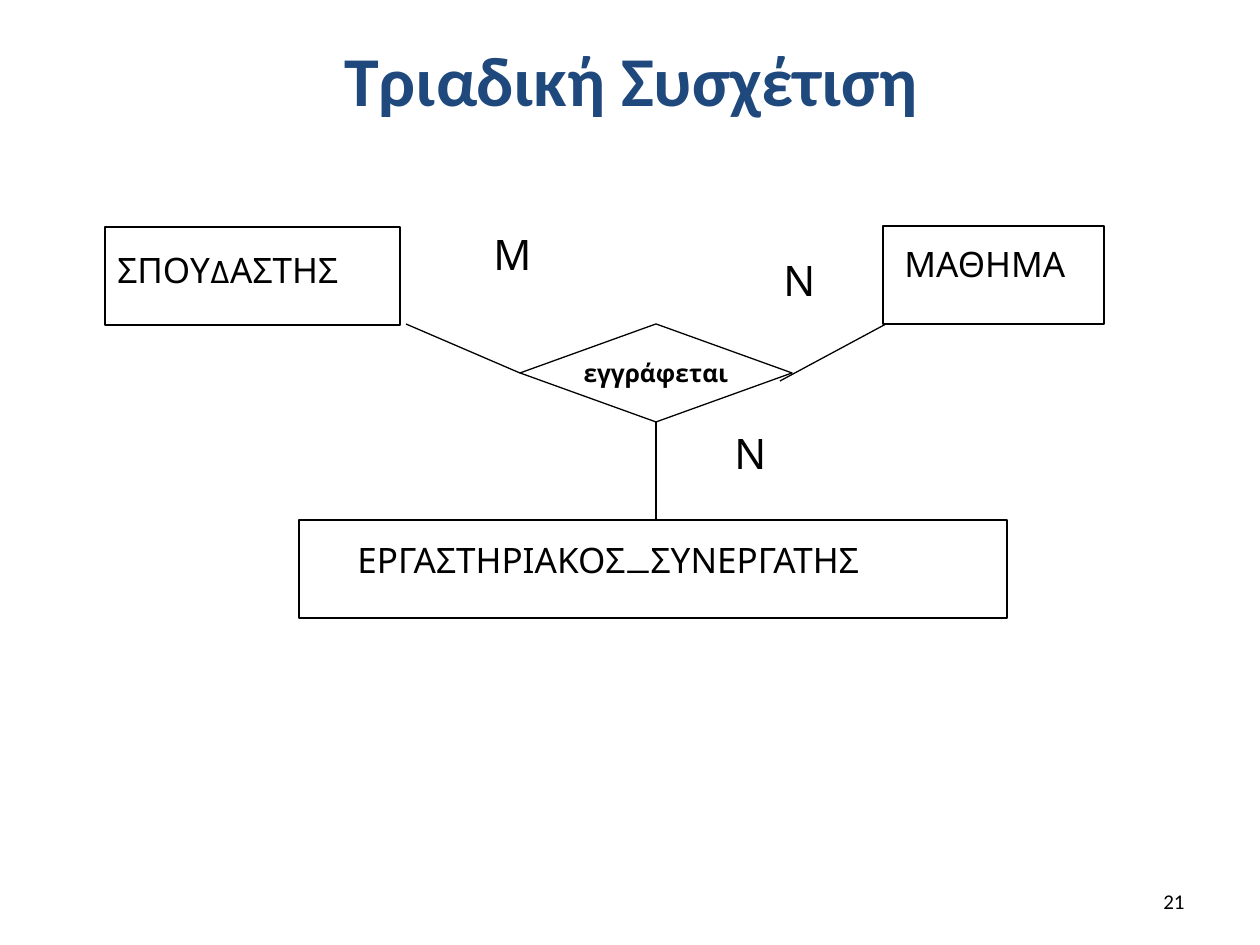
from lxml.etree import SubElement
from pptx import Presentation
from pptx.dml.color import RGBColor
from pptx.enum.shapes import MSO_CONNECTOR as CONN, MSO_SHAPE as SHAPE
from pptx.enum.text import MSO_ANCHOR as ANCHOR, MSO_AUTO_SIZE as AUTO, PP_ALIGN as ALIGN
from pptx.oxml.ns import qn
from pptx.util import Inches, Pt

COLORS = {"ink": "000000", "title": "1F497D"}
SCALE = Inches(1) / 126


def px(n):
    return round(n * SCALE)


def color(name):
    return RGBColor.from_string(COLORS[name])


def write(sp, text, size, font="Karla", ink="ink", bold=False,
          align=ALIGN.LEFT, anchor=ANCHOR.TOP, wrap=False):
    tf = sp.text_frame
    tf.word_wrap = wrap
    tf.vertical_anchor = anchor
    p = tf.paragraphs[0]
    p.alignment = align
    r = p.add_run()
    r.text = text
    r.font.name, r.font.size, r.font.bold = font, Pt(size), bold
    r.font.color.rgb = color(ink)
    return tf


def add_text(s, box, text, size, grow=False, **style):
    sp = s.shapes.add_textbox(*map(px, box))
    tf = write(sp, text, size, **style)
    tf.auto_size = AUTO.SHAPE_TO_FIT_TEXT if grow else AUTO.NONE
    return tf


def add_outline(s, kind, box):
    sp = s.shapes.add_shape(kind, *map(px, box))
    sp.shadow.inherit = False
    sp.fill.background()
    sp.line.color.rgb = color("ink")
    sp.line.width = Pt(0.75)
    return sp


def add_line(s, x1, y1, x2, y2):
    line = s.shapes.add_connector(CONN.STRAIGHT, *map(px, (x1, y1, x2, y2)))
    line.line.color.rgb = color("ink")
    line.line.width = Pt(0.75)
    SubElement(line._element.spPr, qn("a:effectLst"))
    return line


def add_entity(s, box, label_dx, label_dy, label_width, name):
    left, top = box[:2]
    add_outline(s, SHAPE.RECTANGLE, box)
    add_text(s, (left + label_dx, top + label_dy, label_width, 73), name, 20, grow=True)


def add_cardinality(s, left, top, width, letter):
    tf = add_text(s, (left, top, width, 84), letter, 24, grow=True)
    pPr = tf.paragraphs[0]._p.get_or_add_pPr()
    pPr.set("marL", str(px(48)))
    pPr.set("indent", str(-px(48)))


def add_diagram(s, left, top):
    height = 98

    # Entities
    add_entity(s, (left, top + 5, 295, height), 0, 15, 295, "ΣΠΟΥΔΑΣΤΗΣ")
    add_entity(s, (left + 778, top + 4, 221, height), 9, 10, 209, "ΜΑΘΗΜΑ")
    add_entity(s, (left + 194, top + 298, 708, height), 46, 12, 627,
               "ΕΡΓΑΣΤΗΡΙΑΚΟΣ_ΣΥΝΕΡΓΑΤΗΣ")

    # Relationship
    x, y, width = left + 415, top + 102, 272
    diamond = add_outline(s, SHAPE.DIAMOND, (x, y, width, height))
    write(diamond, "εγγράφεται", 14, bold=True, align=ALIGN.CENTER, anchor=ANCHOR.MIDDLE)

    # Lines from the relationship to the entities
    middle = x + width // 2
    to_student = add_line(s, left + 301, y, x, y + height // 2)
    to_student.end_connect(diamond, 1)
    add_line(s, left + 675, top + 159, left + 781, y)
    to_partner = add_line(s, middle, y + height, middle, top + 298)
    to_partner.begin_connect(diamond, 2)

    # Cardinalities
    add_cardinality(s, left + 666, top + 26, 66, "Ν")
    add_cardinality(s, left + 617, top + 199, 66, "Ν")
    add_cardinality(s, left + 376, top, 72, "Μ")


def add_title(s, box):
    add_text(s, box, "Τριαδική Συσχέτιση", 40, font="Calibri", ink="title", bold=True,
             align=ALIGN.CENTER, anchor=ANCHOR.MIDDLE, wrap=True)


def add_page_number(s, box):
    add_text(s, box, "21", 12, font="Calibri", align=ALIGN.RIGHT,
             anchor=ANCHOR.MIDDLE, wrap=True)


def main():
    prs = Presentation()
    prs.slide_width, prs.slide_height = px(1260), px(945)
    s = prs.slides.add_slide(prs.slide_layouts[6])
    add_diagram(s, 105, 222)
    add_title(s, (64, 16, 1134, 125))
    add_page_number(s, (903, 876, 294, 50))
    prs.save("out.pptx")


if __name__ == "__main__":
    main()
